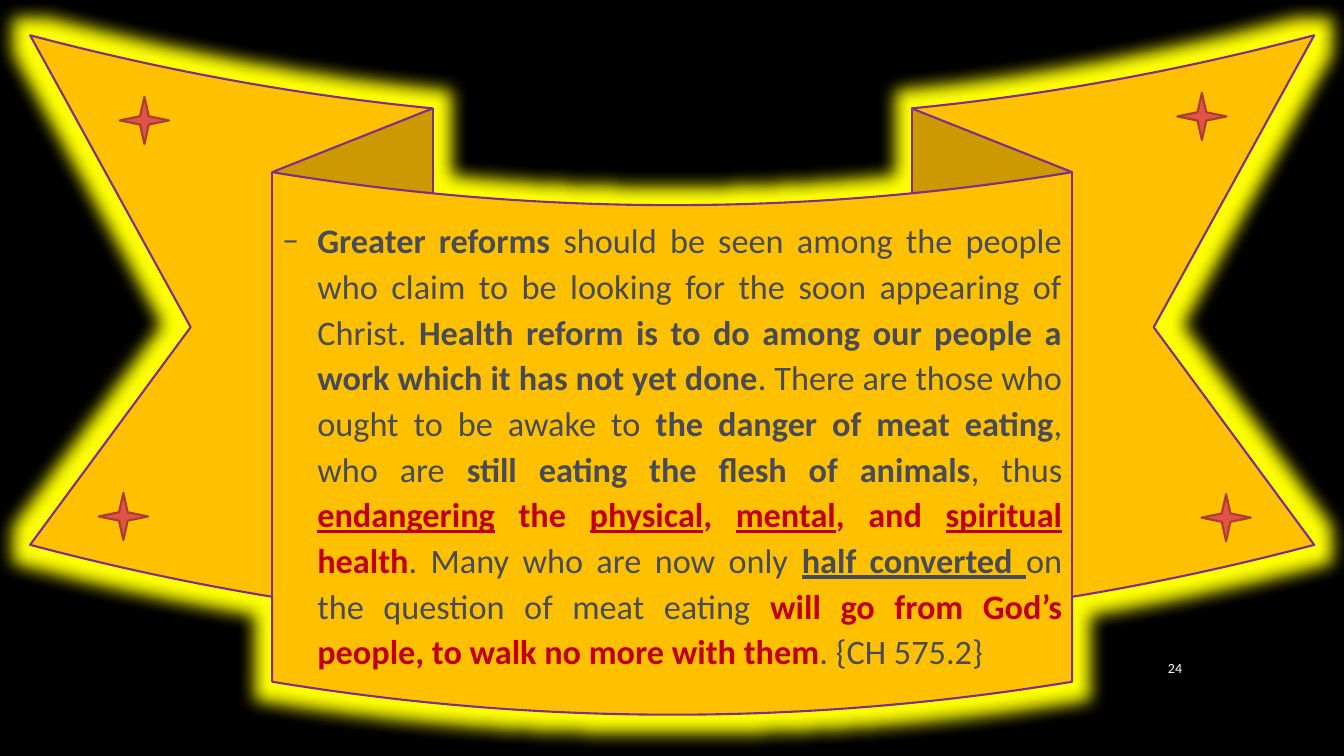
from lxml import etree
from pptx import Presentation
from pptx import util as u
from pptx.dml.color import RGBColor
from pptx.enum import shapes, text
from pptx.oxml import ns

COLOURS = {
    "background": "000000", "ribbon": "FFC000", "ribbon_line": "7F2E8F",
    "glow": "FFFF00", "star": "E25247", "star_line": "A73D35",
    "body": "474B57", "warning": "C00000", "number": "FFFFFF",
}
FONT = "Calibri"

# Each part of the quotation: wording, colour, bold, underlined
QUOTATION = [
    ("Greater reforms ", "body", True, False),
    ("should be seen among the people who claim to be looking for the soon "
     "appearing of Christ. ", "body", False, False),
    ("Health reform is to do among our people a work which it has not yet done",
     "body", True, False),
    (". There are those who ought to be awake to ", "body", False, False),
    ("the danger of meat eating", "body", True, False),
    (", who are ", "body", False, False),
    ("still eating the flesh of animals", "body", True, False),
    (", thus ", "body", False, False),
    ("endangering", "warning", True, True),
    (" the ", "warning", True, False),
    ("physical", "warning", True, True),
    (", ", "warning", True, False),
    ("mental", "warning", True, True),
    (", and ", "warning", True, False),
    ("spiritual", "warning", True, True),
    (" health", "warning", True, False),
    (". Many who are now only ", "body", False, False),
    ("half converted ", "body", True, True),
    ("on the question of meat eating ", "body", False, False),
    ("will go from God’s people, to walk no more with them",
     "warning", True, False),
    (". {CH 575.2}", "body", False, False),
]
STAR_POSITIONS = [(3.02, 2.44), (2.49, 12.42), (29.67, 2.34), (30.28, 12.45)]


def rgb(name):
    return RGBColor.from_string(COLOURS[name])


def add_figure(slide, kind, box, fill, line):
    shape = slide.shapes.add_shape(kind, *map(u.Cm, box))
    shape.shadow.inherit = False
    shape.fill.solid()
    shape.fill.fore_color.rgb = rgb(fill)
    shape.line.color.rgb = rgb(line)
    shape.line.width = u.Pt(1.5)
    return shape


def add_glow(shape, colour, radius):
    effects = shape.element.spPr.find(ns.qn("a:effectLst"))
    glow = etree.SubElement(effects, ns.qn("a:glow"), rad=str(u.Cm(radius)))
    etree.SubElement(glow, ns.qn("a:srgbClr"), val=COLOURS[colour])


def add_dash_bullet(paragraph, indent):
    properties = paragraph._p.get_or_add_pPr()
    properties.set("marL", str(u.Cm(indent)))
    properties.set("indent", str(-u.Cm(indent)))
    etree.SubElement(properties, ns.qn("a:buFont"), typeface=FONT)
    etree.SubElement(properties, ns.qn("a:buChar"), char="–")


def format_run(run, size, colour, bold=False, underline=False):
    run.font.name = FONT
    run.font.size = u.Pt(size)
    run.font.color.rgb = rgb(colour)
    run.font.bold = bold
    run.font.underline = underline


def fill_quotation(shape):
    frame = shape.text_frame
    frame.word_wrap = True
    frame.vertical_anchor = text.MSO_ANCHOR.MIDDLE
    paragraph = frame.paragraphs[0]
    paragraph.alignment = text.PP_ALIGN.JUSTIFY
    paragraph.line_spacing = 1.11
    paragraph.space_before = u.Pt(9.3)
    add_dash_bullet(paragraph, 0.89)
    for wording, colour, bold, underline in QUOTATION:
        run = paragraph.add_run()
        run.text = wording
        format_run(run, 24.5, colour, bold, underline)


def add_slide_number(slide, number, box):
    frame = slide.shapes.add_textbox(*map(u.Cm, box)).text_frame
    frame.word_wrap = True
    frame.vertical_anchor = text.MSO_ANCHOR.MIDDLE
    frame.text = number
    paragraph = frame.paragraphs[0]
    paragraph.alignment = text.PP_ALIGN.RIGHT
    format_run(paragraph.runs[0], 10, "number")


def main():
    presentation = Presentation()
    presentation.slide_width = u.Cm(33.87)
    presentation.slide_height = u.Cm(19.05)
    slide = presentation.slides.add_slide(presentation.slide_layouts[6])
    slide.background.fill.solid()
    slide.background.fill.fore_color.rgb = rgb("background")

    # Glowing ribbon with the quotation
    ribbon = add_figure(slide, shapes.MSO_SHAPE.CURVED_DOWN_RIBBON,
                        (0.76, 0.89, 32.36, 17.12), "ribbon", "ribbon_line")
    for index, value in enumerate((0.25, 0.623, 0.125)):
        ribbon.adjustments[index] = value
    add_glow(ribbon, "glow", 0.85)
    fill_quotation(ribbon)

    # Stars on the ribbon tails
    for left, top in STAR_POSITIONS:
        add_figure(slide, shapes.MSO_SHAPE.STAR_4_POINT,
                   (left, top, 1.24, 1.19), "star", "star_line")

    add_slide_number(slide, "24", (28.52, 16.31, 1.52, 1.04))
    presentation.save("out.pptx")


if __name__ == "__main__":
    main()
